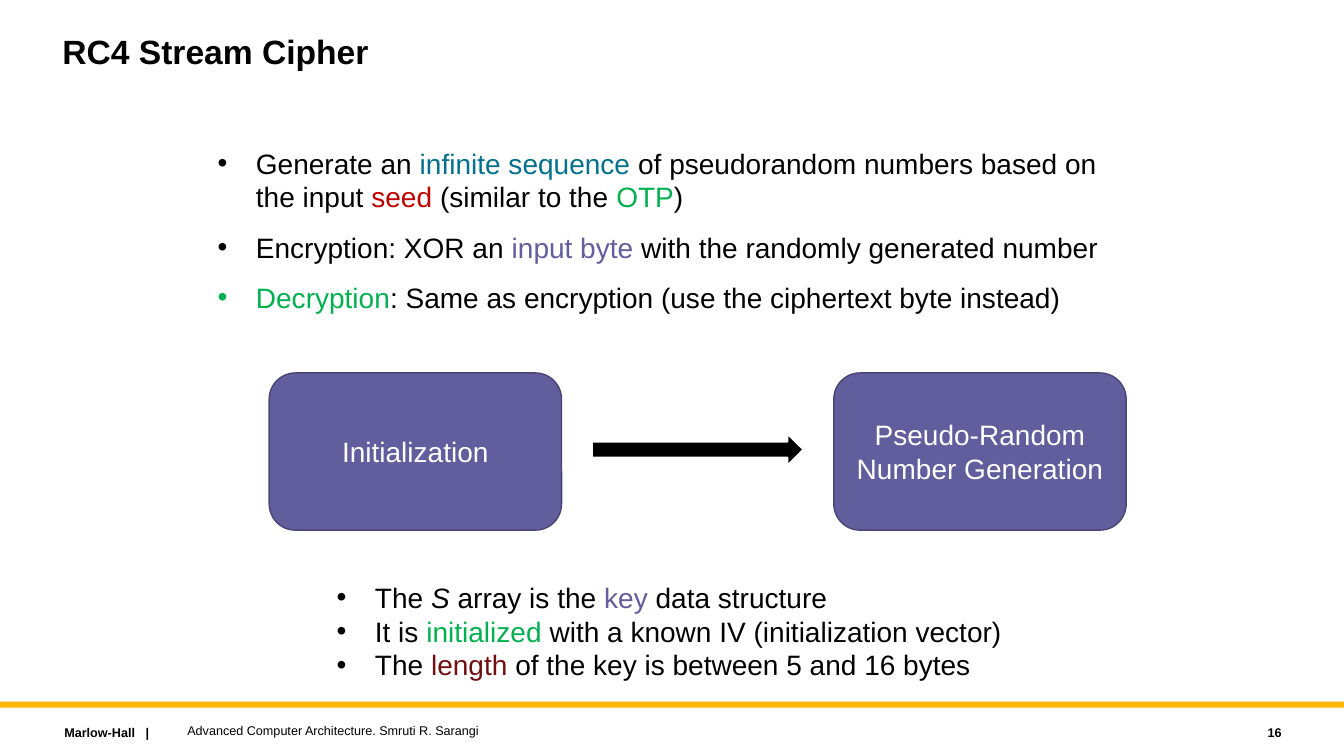
import pptx
import pptx.dml.color
import pptx.enum.shapes
import pptx.enum.text
import pptx.oxml.ns
import pptx.util
from lxml import etree

PX = 9144
FONT = "Arial"
COLORS = {
    "black": "000000",
    "white": "FFFFFF",
    "gold": "FFB600",
    "purple": "625D9C",
    "outline": "494573",
    "teal": "01708C",
    "red": "C00000",
    "green": "00B050",
    "maroon": "720F11",
}
ALIGN = pptx.enum.text.PP_ALIGN
ANCHOR = pptx.enum.text.MSO_ANCHOR
SHAPE = pptx.enum.shapes.MSO_SHAPE

CIPHER_POINTS = [
    [("Generate an ", "black"), ("infinite sequence", "teal"),
     (" of pseudorandom numbers based on the input ", "black"), ("seed", "red"),
     (" (similar to the ", "black"), ("OTP", "green"), (")", "black")],
    [("Encryption: XOR an ", "black"), ("input byte ", "purple"),
     ("with the randomly generated number", "black")],
    [("Decryption", "green"),
     (": Same as encryption (use the ciphertext byte instead)", "black")],
]
KEY_POINTS = [
    [("The ", "black"), ("S ", "black", True), ("array is the ", "black"),
     ("key", "purple"), (" data structure", "black")],
    [("It is ", "black"), ("initialized", "green"),
     (" with a known IV (initialization vector)", "black")],
    [("The ", "black"), ("length", "maroon"),
     (" of the key is between 5 and 16 bytes", "black")],
]


def color(name):
    return pptx.dml.color.RGBColor.from_string(COLORS[name])


def lengths(box):
    return [value * PX for value in box]


def add_run(paragraph, text, color_name, size, bold=False, italic=False):
    run = paragraph.add_run()
    run.text = text
    run.font.name = FONT
    run.font.size = pptx.util.Pt(size)
    run.font.bold = bold
    run.font.italic = italic
    run.font.color.rgb = color(color_name)


def add_bullet(paragraph):
    properties = paragraph._p.get_or_add_pPr()
    properties.set("marL", str(38 * PX))
    properties.set("indent", str(-38 * PX))
    etree.SubElement(properties, pptx.oxml.ns.qn("a:buFont"), typeface=FONT)
    etree.SubElement(properties, pptx.oxml.ns.qn("a:buChar"), char="•")


def add_text_box(slide, box, anchor=ANCHOR.TOP):
    frame = slide.shapes.add_textbox(*lengths(box)).text_frame
    frame.word_wrap = True
    frame.vertical_anchor = anchor
    return frame


def add_label(slide, box, text, size=9, bold=False, align=ALIGN.LEFT, anchor=ANCHOR.MIDDLE):
    paragraph = add_text_box(slide, box, anchor).paragraphs[0]
    paragraph.alignment = align
    add_run(paragraph, text, "black", size, bold)
    return paragraph


def add_bullet_list(slide, box, points, space_before=0):
    frame = add_text_box(slide, box)
    for index, point in enumerate(points):
        paragraph = frame.add_paragraph() if index else frame.paragraphs[0]
        add_bullet(paragraph)
        paragraph.space_before = pptx.util.Pt(space_before if index else 0)
        for text, color_name, *italic in point:
            add_run(paragraph, text, color_name, 20, italic=bool(italic))
    return frame


def add_filled_shape(slide, kind, box, fill, line=None, line_width=1):
    shape = slide.shapes.add_shape(kind, *lengths(box))
    shape.shadow.inherit = False
    shape.fill.solid()
    shape.fill.fore_color.rgb = color(fill)
    if line:
        shape.line.color.rgb = color(line)
        shape.line.width = pptx.util.Pt(line_width)
    else:
        shape.line.fill.background()
    return shape


def add_stage(slide, left, text):
    shape = add_filled_shape(slide, SHAPE.ROUNDED_RECTANGLE, (left, 370, 290, 156),
                             "purple", "outline")
    frame = shape.text_frame
    frame.word_wrap = True
    frame.vertical_anchor = ANCHOR.MIDDLE
    paragraph = frame.paragraphs[0]
    paragraph.alignment = ALIGN.CENTER
    add_run(paragraph, text, "white", 20)


def main():
    presentation = pptx.Presentation()
    presentation.slide_width = 1333 * PX
    presentation.slide_height = 750 * PX
    slide = presentation.slides.add_slide(presentation.slide_layouts[6])

    add_filled_shape(slide, SHAPE.RECTANGLE, (0, 696, 1333, 6), "gold")
    add_label(slide, (54, 714, 227, 25), "Marlow-Hall   |", bold=True)
    title = add_label(slide, (52, 30, 1000, 90), "RC4 Stream Cipher", 24, True,
                      anchor=ANCHOR.TOP)
    title.line_spacing = 0.9
    add_bullet_list(slide, (206, 140, 922, 186), CIPHER_POINTS, 12)

    add_label(slide, (176, 712, 800, 25), "Advanced Computer Architecture. Smruti R. Sarangi")
    add_label(slide, (1141, 714, 140, 25), "16", bold=True, align=ALIGN.RIGHT)

    add_stage(slide, 267, "Initialization")
    add_filled_shape(slide, SHAPE.RIGHT_ARROW, (587, 430, 210, 32), "black", "white", 1.5)
    add_stage(slide, 827, "Pseudo-Random Number Generation")

    key_frame = add_bullet_list(slide, (324, 571, 685, 111), KEY_POINTS)
    key_frame.word_wrap = False
    key_frame.auto_size = pptx.enum.text.MSO_AUTO_SIZE.SHAPE_TO_FIT_TEXT

    presentation.save("out.pptx")


if __name__ == "__main__":
    main()
